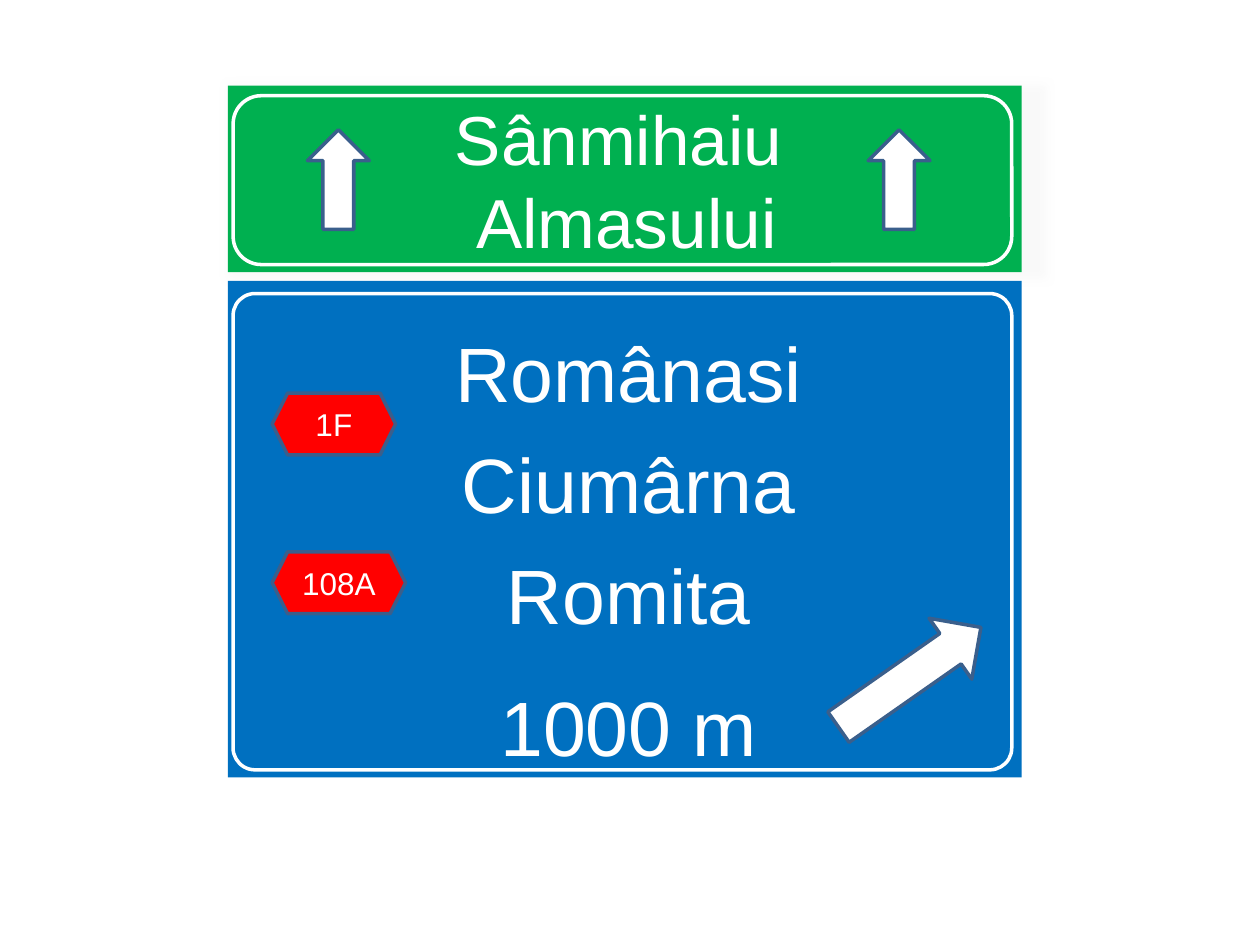
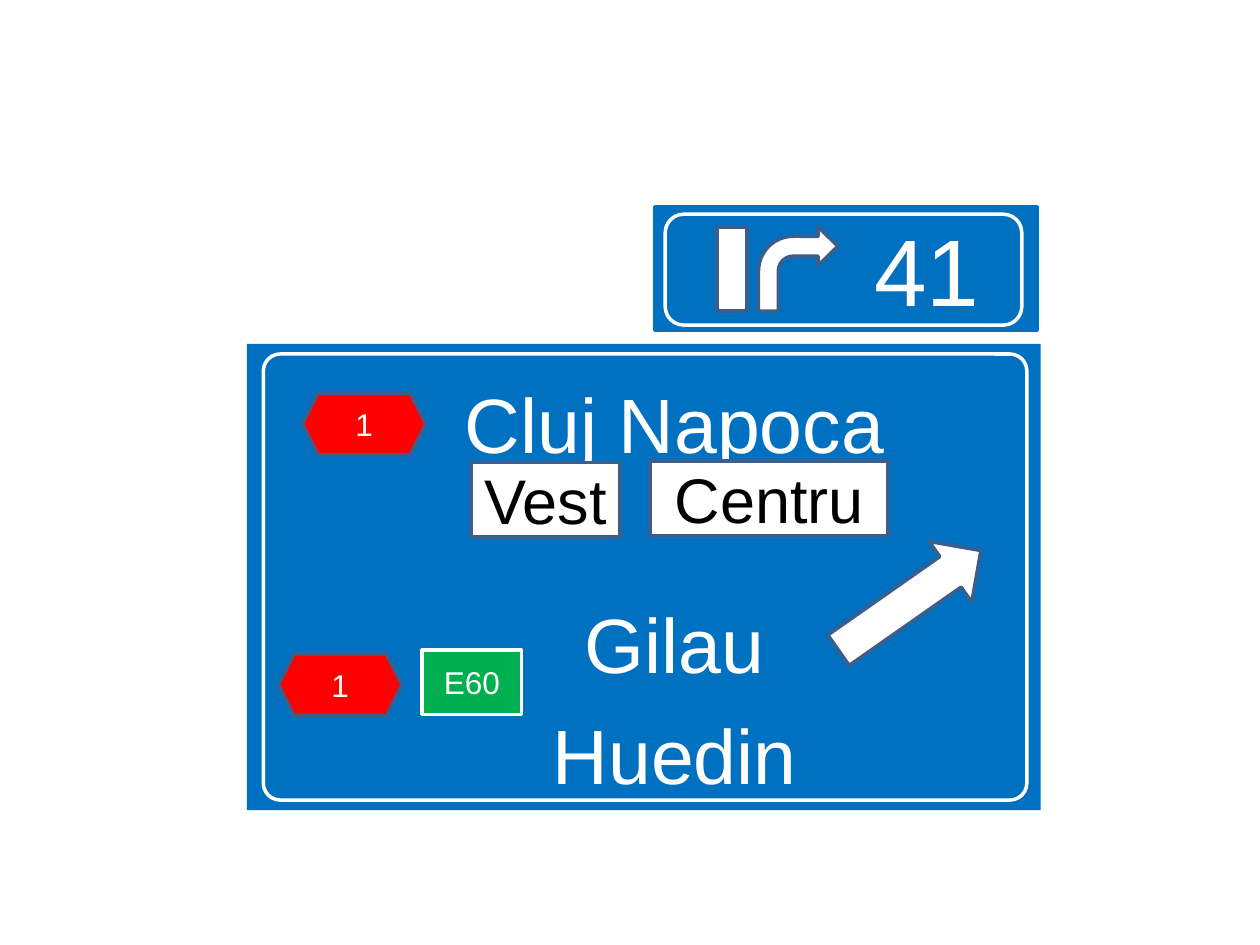
"""Build two slides of Romanian motorway direction signs."""
import pptx
import pptx.dml.color
import pptx.enum.shapes
import pptx.enum.text
import pptx.oxml
import pptx.util
from lxml import etree

Inches = pptx.util.Inches
KINDS = pptx.enum.shapes.MSO_SHAPE
BLUE, GREEN, RED = "0070C0", "00B050", "FF0000"
WHITE, BLACK, EDGE, SHADOW = "FFFFFF", "000000", "3A5F8C", "F2F2F2"
FONT = "Arial"
DEFAULT_INSETS = (0.1, 0.05, 0.1, 0.05)
LINE_GAP = 10.8

STYLES = {
    "panel": dict(kind=KINDS.RECTANGLE, fill=BLUE, size=44, anchor="TOP", wrap=True),
    "title": dict(kind=KINDS.RECTANGLE, fill=GREEN, size=39.6, wrap=True, shadow=True),
    "exit": dict(kind=KINDS.RECTANGLE, fill=BLUE, line=BLUE, size=54, wrap=True),
    "frame": dict(kind=KINDS.ROUNDED_RECTANGLE, line=WHITE),
    "road": dict(kind=KINDS.HEXAGON, fill=RED, line=EDGE, size=18),
    "euro": dict(kind=KINDS.RECTANGLE, fill=GREEN, line=WHITE, size=18),
    "district": dict(kind=KINDS.RECTANGLE, fill=WHITE, line=EDGE, size=36, color=BLACK),
    "ahead": dict(kind=KINDS.UP_ARROW, fill=WHITE, line=EDGE),
    "ramp": dict(kind=KINDS.RIGHT_ARROW, fill=WHITE, line=EDGE, rotation=325),
    "lane": dict(kind=KINDS.RECTANGLE, fill=WHITE, line=EDGE),
    "turn": dict(kind=KINDS.BENT_ARROW, fill=WHITE, line=EDGE,
                 adjustments=(0.25, 0.245, 0.25, 0.438)),
}

# Each part: style, (left, top, width, height), lines of (text, points before), overrides.
SIGNS = [
    [
        ("title", (1.81, 0.68, 6.3, 1.48), [("Sânmihaiu\v Almasului", 0)],
         dict(insets=(0, 0.05, 0.1, 0.05))),
        ("panel", (1.81, 2.23, 6.3, 3.94),
         [("Românasi", 0), ("Ciumârna", LINE_GAP), ("Romita", LINE_GAP), ("1000 m", 22.6)],
         dict(insets=(0.16, 0.35, 0.1, 0.24))),
        ("ramp", (6.53, 5.08, 1.38, 0.59), [], {}),
        ("ahead", (2.44, 1.03, 0.49, 0.79), [], {}),
        ("ahead", (6.89, 1.03, 0.49, 0.79), [], {}),
        ("road", (2.16, 4.38, 1.06, 0.49), [("108A", 0)], {}),
        ("frame", (1.85, 0.76, 6.18, 1.34), [], {}),
        ("frame", (1.85, 2.33, 6.18, 3.78), [], dict(adjustments=(0.046,))),
        ("road", (2.16, 3.12, 0.98, 0.49), [("1F", 0)], {}),
    ],
    [
        ("panel", (1.96, 2.73, 6.3, 3.7),
         [("Cluj Napoca", 0), ("Gilau", 72.8), ("Huedin", LINE_GAP)],
         dict(insets=(0.59, 0.26, 0.1, 0.24))),
        ("ramp", (6.53, 4.47, 1.38, 0.59), [], {}),
        ("road", (2.4, 3.12, 0.98, 0.49), [("1", 0)], {}),
        ("district", (3.74, 3.67, 1.18, 0.59), [("Vest", 0)], {}),
        ("district", (5.16, 3.66, 1.89, 0.59), [("Centru", 0)], {}),
        ("euro", (3.35, 5.16, 0.79, 0.51), [("E60", 0)], {}),
        ("road", (2.21, 5.19, 0.98, 0.49), [("1", 0)], {}),
        ("frame", (2.09, 2.81, 6.06, 3.54), [], dict(adjustments=(0.038,))),
        ("exit", (5.2, 1.64, 3.03, 0.98), [("41", 0)],
         dict(insets=(1.38, 0.05, 0.1, 0.05))),
        ("lane", (5.69, 1.8, 0.24, 0.67), [], {}),
        ("turn", (6.02, 1.8, 0.63, 0.67), [], {}),
        ("frame", (5.28, 1.7, 2.83, 0.88), [], {}),
    ],
]


def rgb(value):
    return pptx.dml.color.RGBColor.from_string(value)


def paint(shape, fill, line):
    shape.shadow.inherit = False
    if fill:
        shape.fill.solid()
        shape.fill.fore_color.rgb = rgb(fill)
    else:
        shape.fill.background()
    if line:
        shape.line.color.rgb = rgb(line)
        shape.line.width = pptx.util.Pt(2)
    else:
        shape.line.fill.background()


def cast_shadow(shape):
    effects = shape.element.spPr.find(pptx.oxml.ns.qn("a:effectLst"))
    outer = etree.SubElement(effects, pptx.oxml.ns.qn("a:outerShdw"), blurRad="63500",
                             sx="103000", sy="103000", algn="tl", rotWithShape="0")
    color = etree.SubElement(outer, pptx.oxml.ns.qn("a:srgbClr"), val=SHADOW)
    etree.SubElement(color, pptx.oxml.ns.qn("a:alpha"), val="40000")


def write(shape, lines, size, color, anchor, wrap, insets):
    frame = shape.text_frame
    frame.word_wrap = wrap
    frame.vertical_anchor = getattr(pptx.enum.text.MSO_ANCHOR, anchor)
    (frame.margin_left, frame.margin_top,
     frame.margin_right, frame.margin_bottom) = map(Inches, insets)
    for index, (text, before) in enumerate(lines):
        paragraph = frame.add_paragraph() if index else frame.paragraphs[0]
        paragraph.text = text
        paragraph.alignment = pptx.enum.text.PP_ALIGN.CENTER
        paragraph.space_before = pptx.util.Pt(before)
        paragraph.font.name = FONT
        paragraph.font.size = pptx.util.Pt(size)
        paragraph.font.color.rgb = rgb(color)


def add_part(page, style, place, lines, overrides):
    look = STYLES[style] | overrides
    shape = page.shapes.add_shape(look["kind"], *map(Inches, place))
    paint(shape, look.get("fill"), look.get("line"))
    shape.rotation = look.get("rotation", 0)
    for index, value in enumerate(look.get("adjustments", ())):
        shape.adjustments[index] = value
    if look.get("shadow"):
        cast_shadow(shape)
    if lines:
        write(shape, lines, look["size"], look.get("color", WHITE),
              look.get("anchor", "MIDDLE"), look.get("wrap", False),
              look.get("insets", DEFAULT_INSETS))


def main():
    deck = pptx.Presentation()
    deck.slide_width, deck.slide_height = Inches(10), Inches(7.5)
    for parts in SIGNS:
        page = deck.slides.add_slide(deck.slide_layouts[6])
        for part in parts:
            add_part(page, *part)
    deck.save("out.pptx")


if __name__ == "__main__":
    main()
